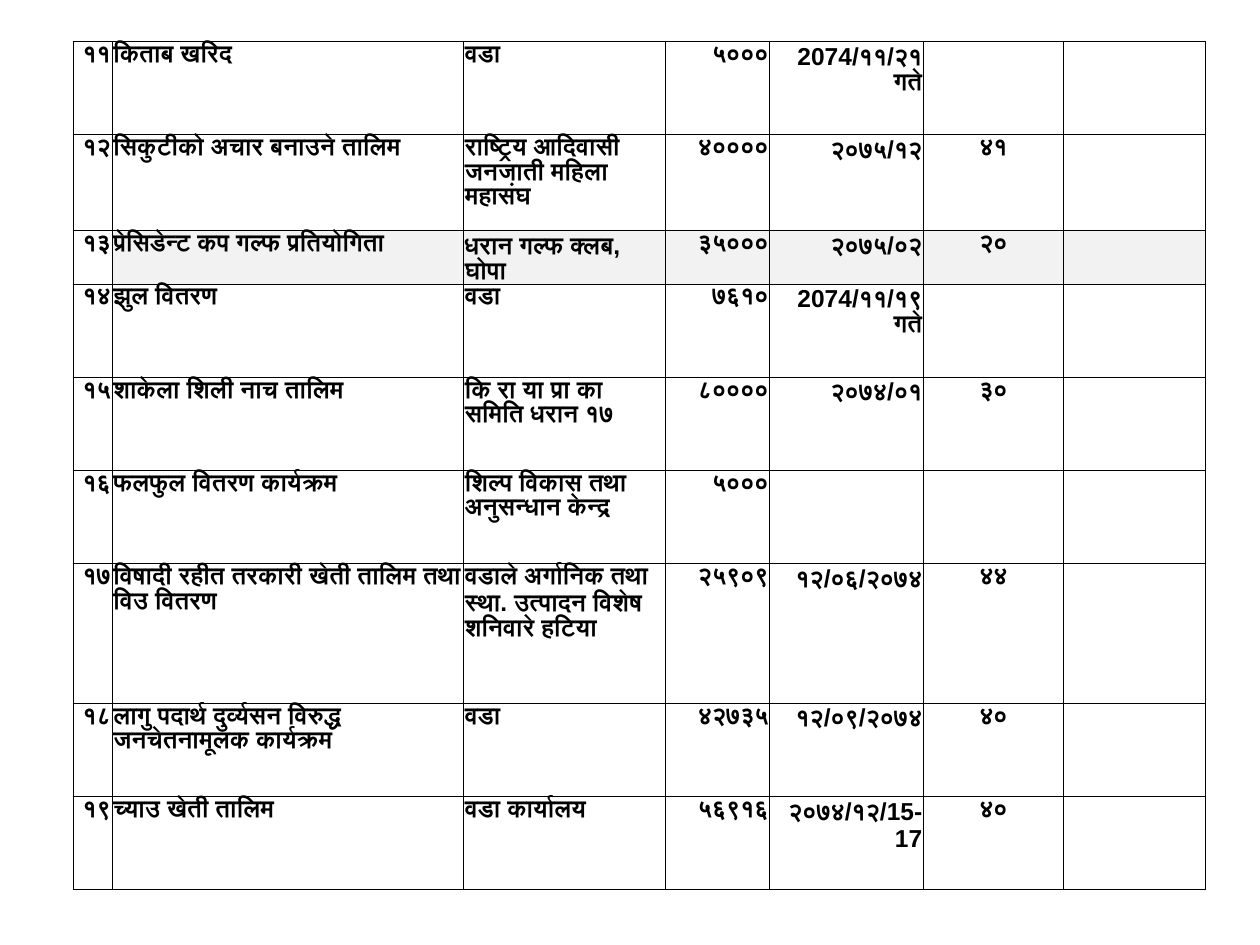
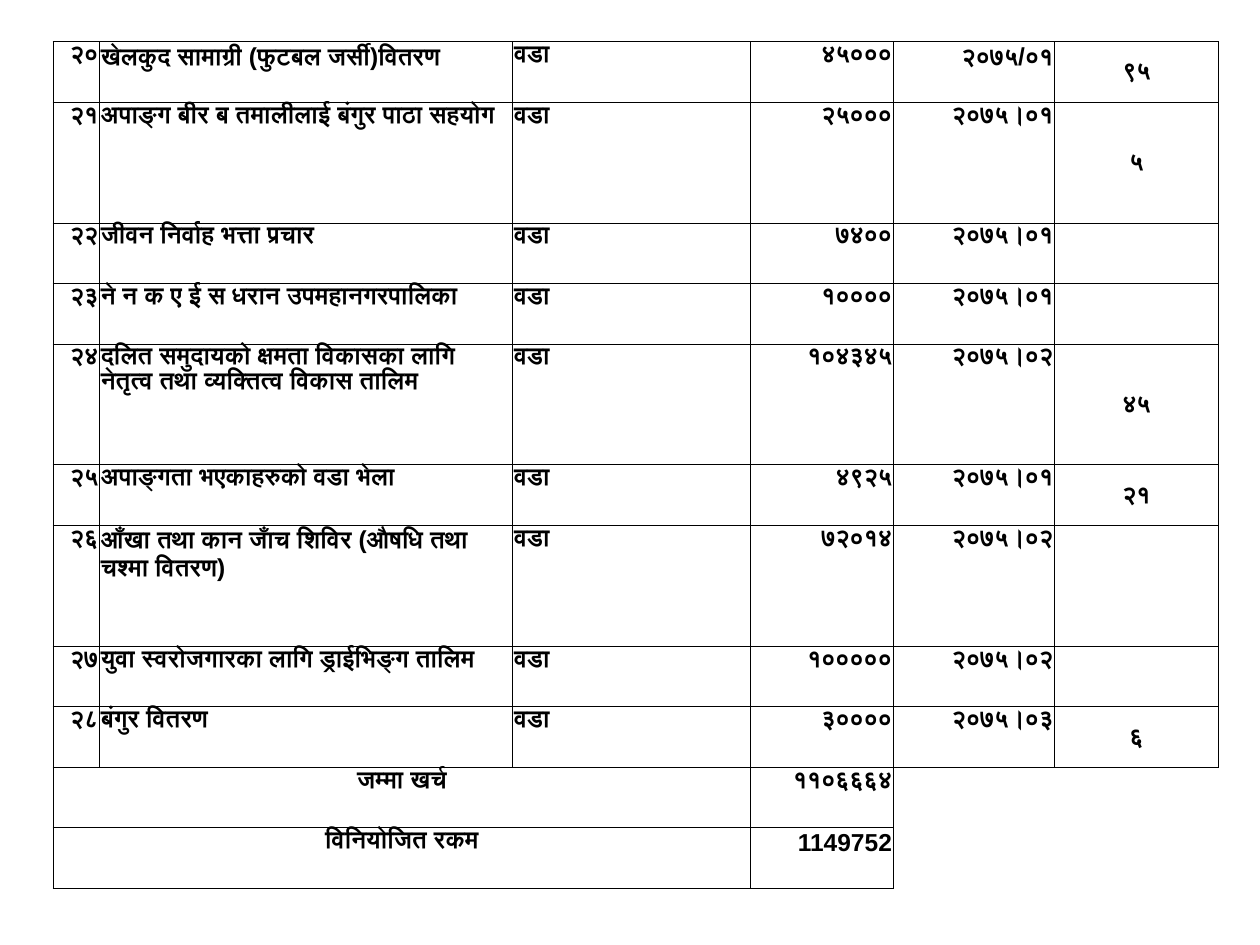
from dataclasses import dataclass

from lxml import etree
from pptx import Presentation
from pptx.dml.color import RGBColor
from pptx.enum.text import MSO_ANCHOR, PP_ALIGN
from pptx.oxml.ns import qn
from pptx.util import Inches, Pt

LEFT, CENTER, RIGHT = PP_ALIGN.LEFT, PP_ALIGN.CENTER, PP_ALIGN.RIGHT
TOP, MIDDLE = MSO_ANCHOR.TOP, MSO_ANCHOR.MIDDLE
COLUMN_ALIGNMENTS = (RIGHT, LEFT, LEFT, RIGHT, RIGHT, CENTER, LEFT)
NEIGHBOURS = {"a:lnL": (0, -1), "a:lnR": (0, 1), "a:lnT": (-1, 0), "a:lnB": (1, 0)}


@dataclass(frozen=True)
class Theme:
    """Colours, type and cell measures shared by the slides."""
    ink: str = "000000"
    highlight: str = "F2F2F2"
    font: str = "Arial"
    size: int = 14
    rule: float = 0.5
    inset: float = 0.01


THEME = Theme()

PROGRAMMES = (
    ("११", "किताब खरिद", "वडा", "५०००", "2074/११/२१ गते", "", ""),
    ("१२", "सिकुटीको अचार बनाउने तालिम", "राष्ट्रिय आदिवासी जनजाती महिला महासंघ",
     "४००००", "२०७५/१२", "४१", ""),
    ("१३", "प्रेसिडेन्ट कप गल्फ प्रतियोगिता", "धरान गल्फ क्लब, घोपा",
     "३५०००", "२०७५/०२", "२०", ""),
    ("१४", "झुल वितरण", "वडा", "७६१०", "2074/११/१९ गते", "", ""),
    ("१५", "शाकेला शिली नाच तालिम", "कि रा या प्रा का समिति धरान १७",
     "८००००", "२०७४/०१", "३०", ""),
    ("१६", "फलफुल वितरण कार्यक्रम", "शिल्प विकास तथा अनुसन्धान केन्द्र",
     "५०००", "", "", ""),
    ("१७", "विषादी रहीत तरकारी खेती तालिम तथा विउ वितरण",
     "वडाले अर्गानिक तथा स्था. उत्पादन विशेष शनिवारे हटिया",
     "२५९०९", "१२/०६/२०७४", "४४", ""),
    ("१८", "लागु पदार्थ दुर्व्यसन विरुद्ध जनचेतनामूलक कार्यक्रम", "वडा",
     "४२७३५", "१२/०९/२०७४", "४०", ""),
    ("१९", "च्याउ खेती तालिम", "वडा कार्यालय", "५६९१६", "२०७४/१२/15-17", "४०", ""),
)

WARD_PROGRAMMES = (
    ("२०", "खेलकुद सामाग्री (फुटबल जर्सी)वितरण", "वडा", "४५०००", "२०७५/०१", "९५"),
    ("२१", "अपाङ्ग बीर ब तमालीलाई बंगुर पाठा सहयोग", "वडा", "२५०००", "२०७५।०१", "५"),
    ("२२", "जीवन निर्वाह भत्ता प्रचार", "वडा", "७४००", "२०७५।०१", ""),
    ("२३", "ने न क ए ई स धरान उपमहानगरपालिका", "वडा", "१००००", "२०७५।०१", ""),
    ("२४", "दलित समुदायको क्षमता विकासका लागि नेतृत्व तथा व्यक्तित्व विकास तालिम",
     "वडा", "१०४३४५", "२०७५।०२", "४५"),
    ("२५", "अपाङ्गता भएकाहरुको वडा भेला", "वडा", "४९२५", "२०७५।०१", "२१"),
    ("२६", "आँखा तथा कान जाँच शिविर (औषधि तथा चश्मा वितरण)",
     "वडा", "७२०१४", "२०७५।०२", ""),
    ("२७", "युवा स्वरोजगारका लागि ड्राईभिङ्ग तालिम", "वडा", "१०००००", "२०७५।०२", ""),
    ("२८", "बंगुर वितरण", "वडा", "३००००", "२०७५।०३", "६"),
)

TOTALS = (
    ("जम्मा खर्च", "", "", "११०६६६४", None, None),
    ("विनियोजित रकम", "", "", "1149752", None, None),
)


def is_filled(records, row, column):
    """Tell whether a position lies in the ruled part of the table."""
    return (0 <= row < len(records) and 0 <= column < len(records[0])
            and records[row][column] is not None)


def rule_cell(cell, records, row, column):
    """Draw each edge that touches the ruled part and clear the others."""
    properties = cell._tc.get_or_add_tcPr()
    for tag, (down, across) in NEIGHBOURS.items():
        edge = etree.SubElement(properties, qn(tag), w=str(Pt(THEME.rule)))
        if is_filled(records, row, column) or is_filled(records, row + down, column + across):
            paint = etree.SubElement(edge, qn("a:solidFill"))
            etree.SubElement(paint, qn("a:srgbClr"), val=THEME.ink)
        else:
            etree.SubElement(edge, qn("a:noFill"))


def write_cell(cell, wording, alignment, anchor=TOP):
    """Set the insets of a cell and its wording."""
    cell.margin_left = cell.margin_right = cell.margin_top = Inches(THEME.inset)
    cell.margin_bottom = 0
    cell.vertical_anchor = anchor
    if not wording:
        return
    paragraph = cell.text_frame.paragraphs[0]
    paragraph.text = wording
    paragraph.alignment = alignment
    font = paragraph.runs[0].font
    font.name, font.size, font.bold = THEME.font, Pt(THEME.size), True
    font.color.rgb = RGBColor.from_string(THEME.ink)


def add_register(slide, box, widths, heights, records, count_anchor=TOP):
    """Add a ruled table of programmes at the box and return it."""
    register = slide.shapes.add_table(
        len(heights), len(widths), *(Inches(length) for length in box)).table
    register.first_row = register.horz_banding = False
    for column, width in zip(register.columns, widths):
        column.width = Inches(width)
    for row, height in zip(register.rows, heights):
        row.height = Inches(height)
    for r, record in enumerate(records):
        for c, wording in enumerate(record):
            cell = register.cell(r, c)
            rule_cell(cell, records, r, c)
            cell.fill.background()
            write_cell(cell, wording, COLUMN_ALIGNMENTS[c], count_anchor if c == 5 else TOP)
    return register


def add_programmes_slide(deck):
    """Add the slide with programmes 11 to 19."""
    slide = deck.slides.add_slide(deck.slide_layouts[6])
    widths = (0.31, 2.79, 1.6, 0.83, 1.22, 1.11, 1.13)
    heights = (0.74, 0.76, 0.37, 0.74, 0.74, 0.74, 1.11, 0.74, 0.74)
    register = add_register(slide, (0.58, 0.33, 9, 6.7), widths, heights, PROGRAMMES)
    for column in range(1, len(widths)):
        fill = register.cell(2, column).fill
        fill.solid()
        fill.fore_color.rgb = RGBColor.from_string(THEME.highlight)


def add_totals_slide(deck):
    """Add the slide with programmes 20 to 28 and the two totals."""
    slide = deck.slides.add_slide(deck.slide_layouts[6])
    widths = (0.37, 3.28, 1.89, 1.13, 1.28, 1.3)
    line = 0.48
    heights = [line * lines for lines in (1, 2, 1, 1, 2, 1, 2, 1, 1, 1, 1)]
    register = add_register(slide, (0.42, 0.33, 9.25, 6.75), widths, heights,
                            WARD_PROGRAMMES + TOTALS, MIDDLE)
    for row in range(len(WARD_PROGRAMMES), len(heights)):
        label = register.cell(row, 0)
        label.merge(register.cell(row, 2))
        label.text_frame.paragraphs[0].alignment = CENTER


def main():
    """Build and save the deck."""
    deck = Presentation()
    deck.slide_width, deck.slide_height = Inches(10), Inches(7.5)
    add_programmes_slide(deck)
    add_totals_slide(deck)
    deck.save("out.pptx")


if __name__ == "__main__":
    main()
